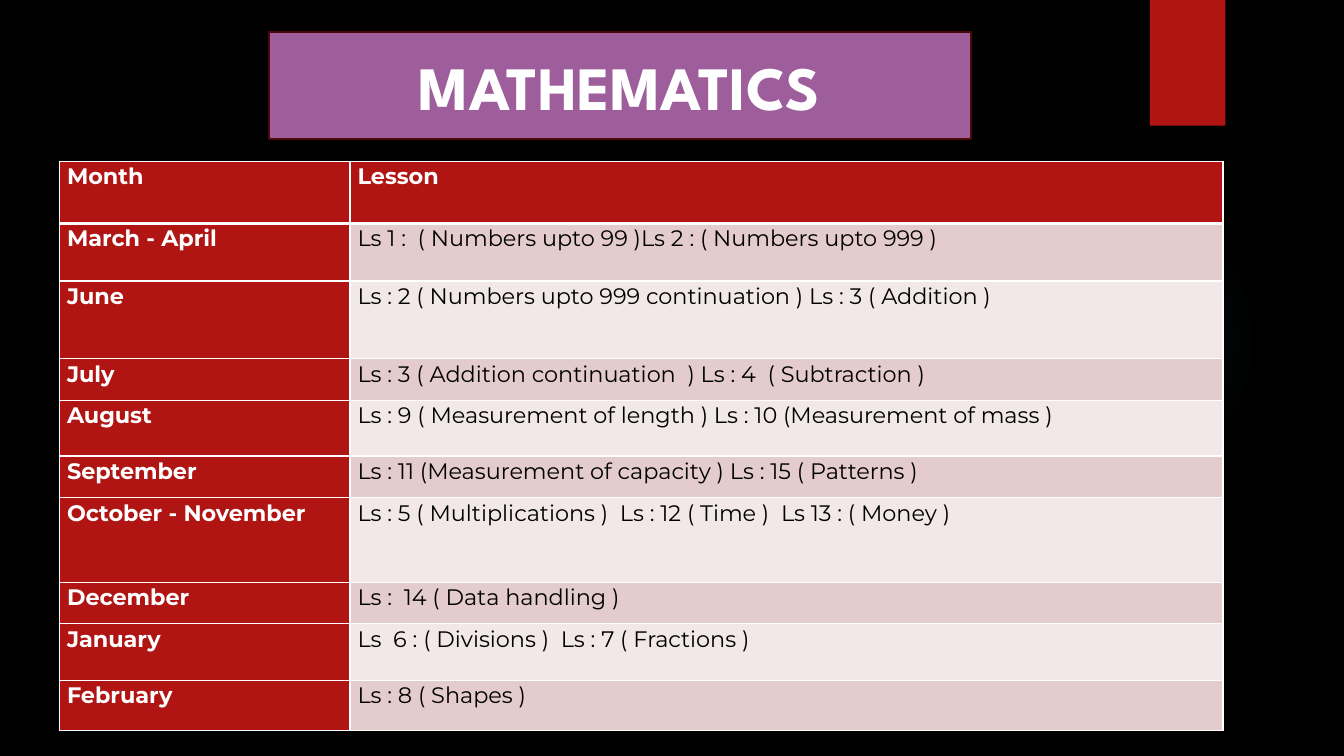
from lxml import etree
from pptx import Presentation
from pptx import util as u
from pptx.dml.color import RGBColor
from pptx.enum import shapes, text
from pptx.oxml import parse_xml
from pptx.oxml.ns import nsdecls, qn

# Content: month, lessons, row height in cm
HEADER = ("Month", "Lesson", 1.57)
LESSONS = [
    ("March - April", "Ls 1 :  ( Numbers upto 99 )Ls 2 : ( Numbers upto 999 )", 1.45),
    ("June", "Ls : 2 ( Numbers upto 999 continuation ) Ls : 3 ( Addition )", 1.96),
    ("July", "Ls : 3 ( Addition continuation  ) Ls : 4  ( Subtraction )", 1.05),
    ("August", "Ls : 9 ( Measurement of length ) Ls : 10 (Measurement of mass )", 1.4),
    ("September", "Ls : 11 (Measurement of capacity ) Ls : 15 ( Patterns )", 1.05),
    ("October - November", "Ls : 5 ( Multiplications )  Ls : 12 ( Time )  Ls 13 : ( Money )", 2.13),
    ("December", "Ls :  14 ( Data handling )", 1.05),
    ("January", "Ls  6 : ( Divisions )  Ls : 7 ( Fractions )", 1.42),
    ("February", "Ls : 8 ( Shapes )", 1.27),
]
ROWS = [HEADER] + LESSONS
COLUMN_WIDTHS = [7.32, 22.0]
RED, PURPLE, MAROON, GLOW = "B01513", "9E5E9B", "4D0908", "50B9C1"
BLACK, WHITE = "000000", "FFFFFF"
BANDS = ["F2E8E7", "E4CCCC"]


def paint(fill, color):
    fill.solid()
    fill.fore_color.rgb = RGBColor.from_string(color)


def style_text(para, font_name, size, color, bold):
    font = para.runs[0].font
    font.name, font.size, font.bold = font_name, u.Pt(size), bold
    font.color.rgb = RGBColor.from_string(color)


def add_plain_shape(kind, left, top, width, height):
    shape = page.shapes.add_shape(kind, u.Cm(left), u.Cm(top), u.Cm(width), u.Cm(height))
    shape.shadow.inherit = False
    shape.line.fill.background()
    return shape


def add_border(cell, side, points):
    cell._tc.get_or_add_tcPr().append(parse_xml(
        f'<a:{side} {nsdecls("a")} w="{u.Pt(points)}"><a:solidFill>'
        f'<a:srgbClr val="{WHITE}"/></a:solidFill></a:{side}>'))


deck = Presentation()
deck.slide_width, deck.slide_height = u.Cm(33.87), u.Cm(19.05)
page = deck.slides.add_slide(deck.slide_layouts[5])
paint(page.background.fill, BLACK)

# Faint round glow and red corner bar
glow = add_plain_shape(shapes.MSO_SHAPE.OVAL, 23.9, 4.65, 7.82, 7.82)
stops = "".join(
    f'<a:gs pos="{position * 1000}"><a:srgbClr val="{GLOW}"><a:alpha val="{alpha * 1000}"/>'
    f'</a:srgbClr></a:gs>' for position, alpha in [(0, 7), (36, 6), (69, 0)])
glow._element.spPr.find(qn("a:prstGeom")).addnext(parse_xml(
    f'<a:gradFill {nsdecls("a")}><a:gsLst>{stops}</a:gsLst><a:path path="circle">'
    '<a:fillToRect l="50000" t="50000" r="50000" b="50000"/></a:path></a:gradFill>'))
bar = add_plain_shape(shapes.MSO_SHAPE.RECTANGLE, 28.98, 0, 1.9, 3.17)
paint(bar.fill, RED)

# Title in an ellipse
title = page.shapes.title
title.left, title.top, title.width, title.height = map(u.Cm, (6.78, 0.81, 17.68, 2.7))
outline = etree.SubElement(title._element.spPr, qn("a:prstGeom"), prst="ellipse")
etree.SubElement(outline, qn("a:avLst"))
paint(title.fill, PURPLE)
paint(title.line.fill, MAROON)
title.line.width = u.Pt(1.5)
frame = title.text_frame
frame.text = "MATHEMATICS"
frame.word_wrap = True
frame.auto_size = text.MSO_AUTO_SIZE.NONE
frame.vertical_anchor = text.MSO_ANCHOR.MIDDLE
frame.paragraphs[0].alignment = text.PP_ALIGN.CENTER
style_text(frame.paragraphs[0], "League Spartan", 44, WHITE, True)

# Lesson table
table = page.shapes.add_table(
    len(ROWS), len(COLUMN_WIDTHS), u.Cm(1.5), u.Cm(4.06),
    u.Cm(sum(COLUMN_WIDTHS)), u.Cm(sum(row[-1] for row in ROWS))).table
for column, width in zip(table.columns, COLUMN_WIDTHS):
    column.width = u.Cm(width)
for r, (month, lesson, height) in enumerate(ROWS):
    table.rows[r].height = u.Cm(height)
    for c, words in enumerate((month, lesson)):
        cell = table.cell(r, c)
        heading = r == 0 or c == 0
        cell.margin_left = cell.margin_right = u.Cm(0.19)
        cell.margin_top = cell.margin_bottom = 0
        for side in ("lnL", "lnR", "lnT", "lnB"):
            under_header = (r, side) in [(0, "lnB"), (1, "lnT")]
            add_border(cell, side, 3 if under_header else 1)
        paint(cell.fill, RED if heading else BANDS[r % 2])
        cell.text_frame.text = words
        para = cell.text_frame.paragraphs[0]
        para.line_spacing, para.space_after = 1.07, u.Pt(8)
        style_text(para, "Montserrat", 16, WHITE if heading else BLACK, heading)

deck.save("out.pptx")
